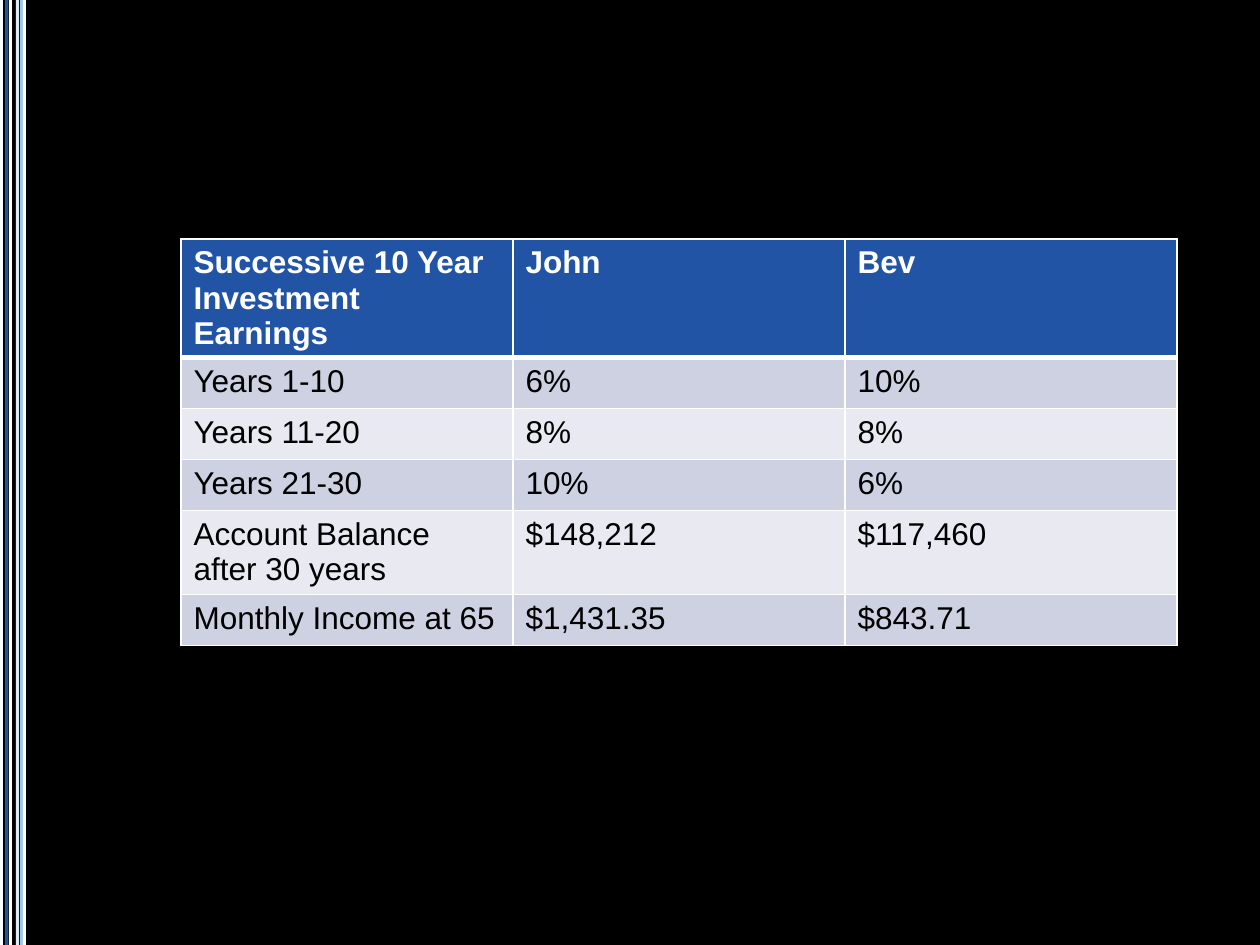
from lxml import etree
from pptx import Presentation, util as u
from pptx.dml.color import RGBColor
from pptx.enum import shapes
from pptx.oxml import ns

PX_PER_INCH = 126
BLACK, WHITE, BLUE = "000000", "FFFFFF", "2254A6"
BANDS = ("CDD1E1", "E8E9F1")

# Left edge, width, colour
STRIPES = [
    (0, 3, WHITE), (9, 3, WHITE), (14, 1, BLACK), (16, 3, "E0EDF8"),
    (20, 3, "9FC6E9"), (23, 3, WHITE), (5, 3, BLUE),
]
EARNINGS = [
    ("Successive 10 Year Investment Earnings", "John", "Bev"),
    ("Years 1-10", "6%", "10%"),
    ("Years 11-20", "8%", "8%"),
    ("Years 21-30", "10%", "6%"),
    ("Account Balance after 30 years", "$148,212", "$117,460"),
    ("Monthly Income at 65", "$1,431.35", "$843.71"),
]
ROW_HEIGHTS = [118, 51, 51, 51, 84, 51]
COLUMN_WIDTH = 332


def px(n):
    return u.Emu(round(n * 914400 / PX_PER_INCH))


def paint(fill, color):
    fill.solid()
    fill.fore_color.rgb = RGBColor.from_string(color)


def add_stripe(s, left, width, color):
    sp = s.shapes.add_shape(shapes.MSO_SHAPE.RECTANGLE,
                            px(left), 0, px(width), px(945))
    sp.shadow.inherit = False
    paint(sp.fill, color)
    sp.line.fill.background()


def set_borders(cell, widths):
    """Put white border lines before the cell's fill, as the schema asks."""
    props = cell._tc.get_or_add_tcPr()
    for i, (side, points) in enumerate(widths.items()):
        line = etree.Element(ns.qn(f"a:ln{side}"), w=str(u.Pt(points)))
        fill = etree.SubElement(line, ns.qn("a:solidFill"))
        etree.SubElement(fill, ns.qn("a:srgbClr"), val=WHITE)
        props.insert(i, line)


def format_cell(cell, value, row):
    header = row == 0
    paint(cell.fill, BLUE if header else BANDS[(row - 1) % 2])
    set_borders(cell, {"L": 1, "R": 1, "T": 3 if row == 1 else 1,
                       "B": 3 if header else 1})
    r = cell.text_frame.paragraphs[0].add_run()
    r.text = value
    font = {"name": "Arial", "size": u.Pt(18), "bold": header}
    for name, setting in font.items():
        setattr(r.font, name, setting)
    paint(r.font.fill, WHITE if header else BLACK)


def add_earnings_table(s, left, top):
    columns = len(EARNINGS[0])
    frame = s.shapes.add_table(len(EARNINGS), columns, px(left), px(top),
                               px(COLUMN_WIDTH * columns), px(sum(ROW_HEIGHTS)))
    table = frame.table
    for column in table.columns:
        column.width = px(COLUMN_WIDTH)
    for i, (height, values) in enumerate(zip(ROW_HEIGHTS, EARNINGS)):
        table.rows[i].height = px(height)
        for j, value in enumerate(values):
            format_cell(table.cell(i, j), value, i)


def main():
    prs = Presentation()
    prs.slide_width, prs.slide_height = px(1260), px(945)
    s = prs.slides.add_slide(prs.slide_layouts[6])
    paint(s.background.fill, BLACK)

    # Stripes down the left edge
    for stripe in STRIPES:
        add_stripe(s, *stripe)

    # Investment comparison
    add_earnings_table(s, 181, 239)
    prs.save("out.pptx")


if __name__ == "__main__":
    main()
